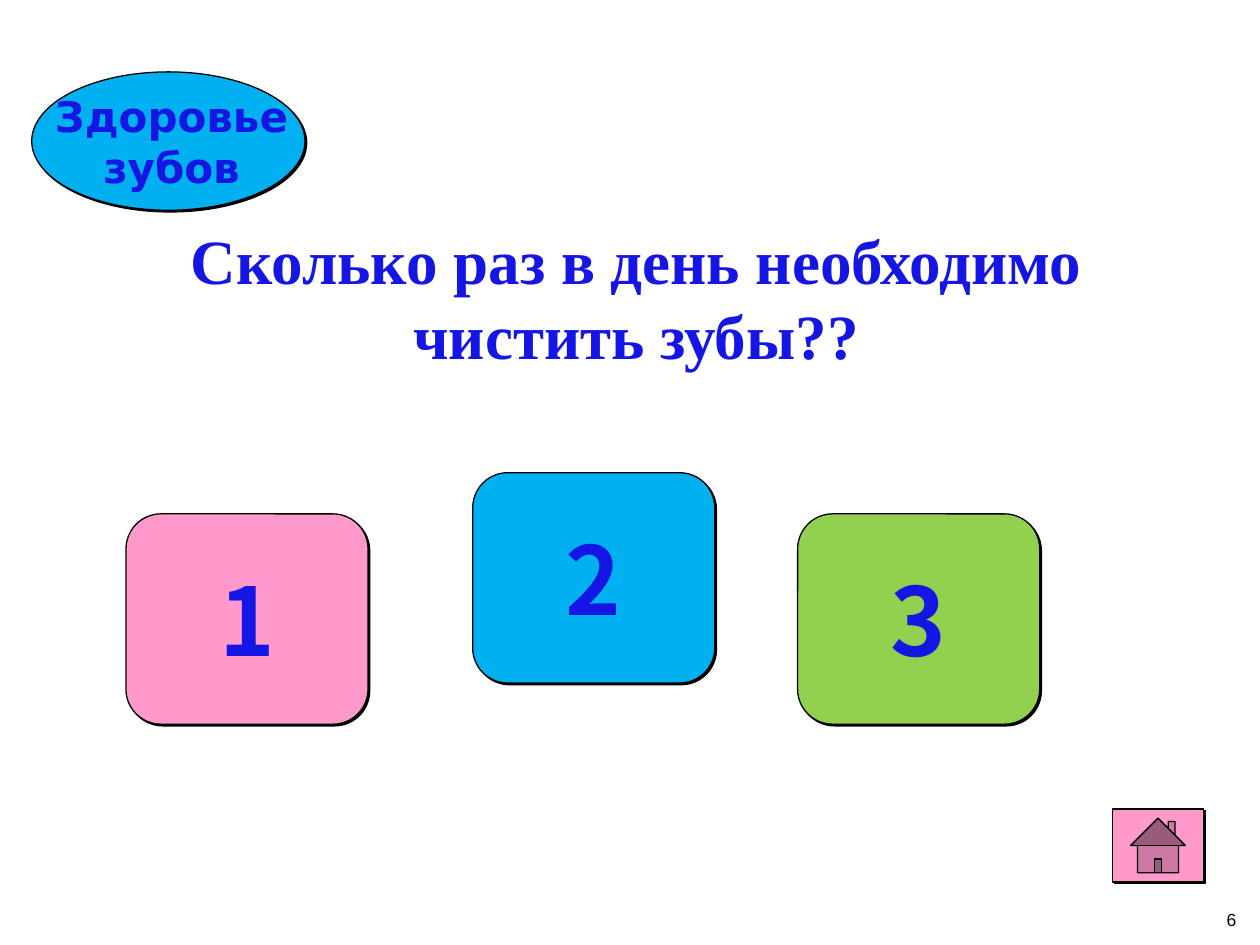
"""Build a quiz slide with a question, three answer cards and a home button."""
from lxml import etree
from pptx import Presentation
from pptx import util as u
from pptx.dml.color import RGBColor
from pptx.enum import shapes, text
from pptx.oxml.ns import qn

COLORS = {
    "ink": "1616E4",
    "black": "000000",
    "blue": "00B0F0",
    "pink": "FF99CC",
    "green": "92D050",
}


def add_shadowed(s, kind, box, fill):
    sp = s.shapes.add_shape(kind, *[u.Cm(v) for v in box])
    sp.fill.solid()
    sp.fill.fore_color.rgb = RGBColor.from_string(COLORS[fill])
    sp.line.color.rgb = RGBColor.from_string(COLORS["black"])
    sp.line.width = u.Pt(0.75)
    sp.shadow.inherit = False
    effects = sp._element.spPr.find(qn("a:effectLst"))
    shadow = etree.SubElement(effects, qn("a:outerShdw"), dist=str(u.Pt(1.4)),
                              dir="2700000", algn="ctr", rotWithShape="0")
    etree.SubElement(shadow, qn("a:srgbClr"), val=COLORS["black"])
    return sp


def write(sp, lines, font, size, color="ink", bold=True, align=text.PP_ALIGN.CENTER):
    tf = sp.text_frame
    tf.text = lines
    for p in tf.paragraphs:
        p.alignment = align
        for r in p.runs:
            r.font.name = font
            r.font.size = u.Pt(size)
            r.font.bold = bold
            r.font.color.rgb = RGBColor.from_string(COLORS[color])
            for tag in ("a:ea", "a:cs"):
                etree.SubElement(r.font._element, qn(tag), typeface=font)
    return tf


prs = Presentation()
prs.slide_width, prs.slide_height = u.Cm(25.4), u.Cm(19.05)
s = prs.slides.add_slide(prs.slide_layouts[5])

title = s.shapes.title
title.left, title.top = u.Cm(1.47), u.Cm(4.32)
title.width, title.height = u.Cm(22.71), u.Cm(3.33)
write(title, "Сколько раз в день необходимо чистить зубы??", "Times New Roman", 36)

topic = add_shadowed(s, shapes.MSO_SHAPE.OVAL, (0.64, 1.45, 5.51, 2.79), "blue")
tf = write(topic, "Здоровье\nзубов", "DejaVu Sans", 24)
tf.word_wrap = False
tf.margin_left = u.Cm(0.38)

cards = [("1", 2.54, 10.36, "pink"), ("2", 9.53, 9.53, "blue"), ("3", 16.08, 10.36, "green")]
for label, left, top, fill in cards:
    card = add_shadowed(s, shapes.MSO_SHAPE.ROUNDED_RECTANGLE, (left, top, 4.88, 4.24), fill)
    write(card, label, "Noto Sans CJK SC", 54)

add_shadowed(s, shapes.MSO_SHAPE.ACTION_BUTTON_HOME, (22.43, 16.31, 1.83, 1.47), "pink")

number = s.shapes.add_textbox(u.Cm(19.25), u.Cm(18.21), u.Cm(5.92), u.Cm(1.32))
write(number, "6", "Arial", 10, "black", False, text.PP_ALIGN.RIGHT).word_wrap = True

prs.save("out.pptx")
